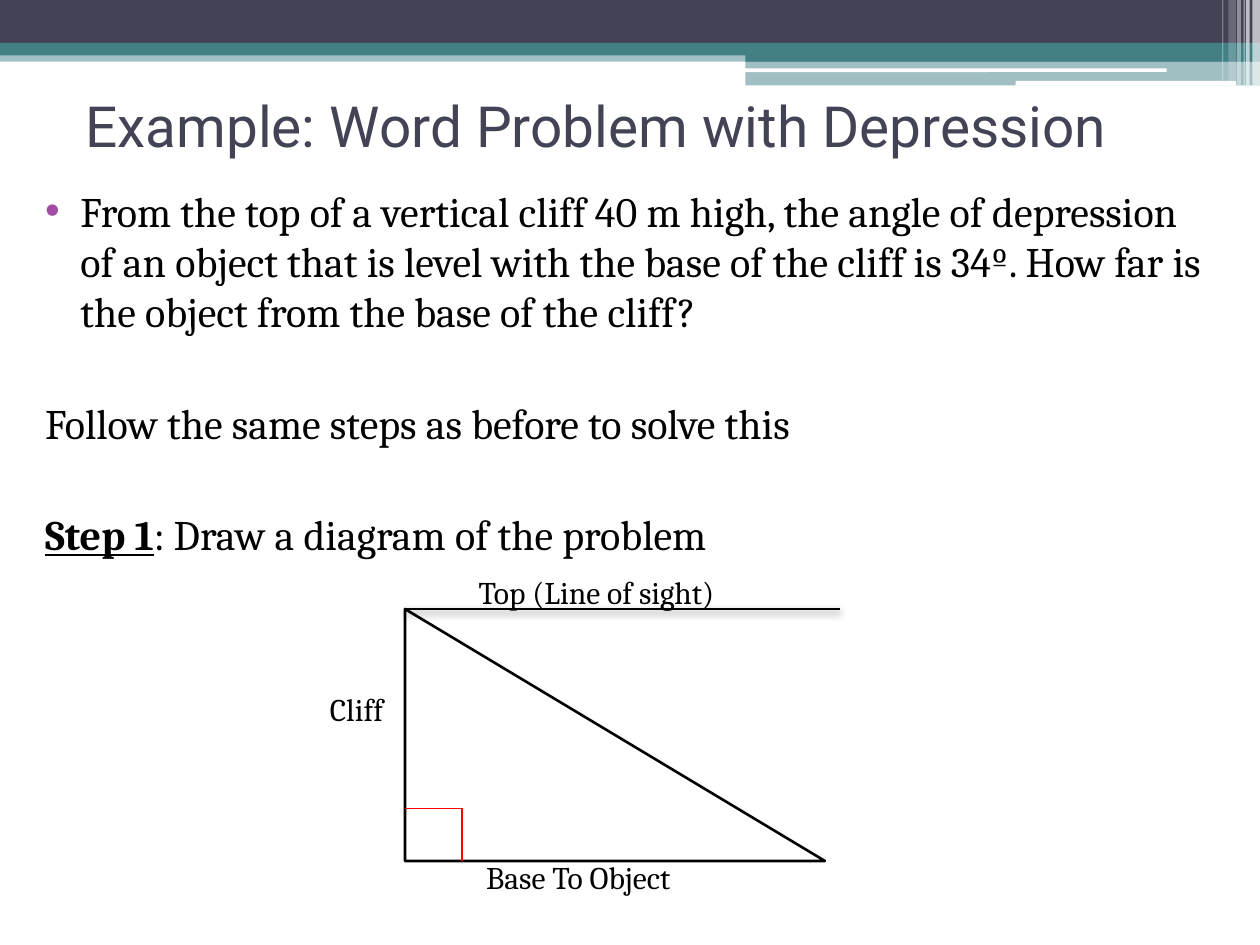
from lxml.etree import SubElement
from pptx import Presentation
from pptx.dml.color import RGBColor
from pptx.enum.shapes import MSO_CONNECTOR, MSO_SHAPE
from pptx.enum.text import MSO_ANCHOR, MSO_AUTO_SIZE
from pptx.oxml.ns import qn
from pptx.util import Pt

COLORS = {
    "navy": "424456",
    "teal": "438086",
    "white": "FFFFFF",
    "black": "000000",
    "red": "FF0000",
    "purple": "A04DA3",
}


def color(name):
    return RGBColor.from_string(COLORS[name])


def add_text(paragraph, text, size=24, font="Cambria", fill="black", bold=False, underline=False):
    run = paragraph.add_run()
    run.text = text
    run.font.size = Pt(size)
    run.font.name = font
    run.font.color.rgb = color(fill)
    run.font.bold = bold
    run.font.underline = underline


class SlideBuilder:
    def __init__(self, slide, label_size=18, outline=1.5):
        self.slide = slide
        self.label_size = label_size
        self.outline = outline

    def shape(self, kind, left, top, width, height, fill, opacity=100, line=None):
        shape = self.slide.shapes.add_shape(kind, Pt(left), Pt(top), Pt(width), Pt(height))
        shape.shadow.inherit = False
        shape.fill.solid()
        shape.fill.fore_color.rgb = color(fill)
        if opacity < 100:
            fill_color = shape.fill._xPr.find(f"{qn('a:solidFill')}/{qn('a:srgbClr')}")
            SubElement(fill_color, qn("a:alpha"), val=str(opacity * 1000))
        if line:
            shape.line.color.rgb = color(line)
            shape.line.width = Pt(self.outline)
        else:
            shape.line.fill.background()

    def line(self, start, end, stroke, width, shadow=False):
        points = [Pt(value) for value in (*start, *end)]
        connector = self.slide.shapes.add_connector(MSO_CONNECTOR.STRAIGHT, *points)
        connector.line.color.rgb = color(stroke)
        connector.line.width = Pt(width)
        effects = SubElement(connector._element.spPr, qn("a:effectLst"))
        if shadow:
            outer = SubElement(effects, qn("a:outerShdw"), blurRad=str(Pt(4.1)),
                               dist=str(Pt(2)), dir="5400000", rotWithShape="0")
            shade = SubElement(outer, qn("a:srgbClr"), val=COLORS["black"])
            SubElement(shade, qn("a:alpha"), val="40000")

    def text_box(self, left, top, width, height, anchor=MSO_ANCHOR.TOP):
        box = self.slide.shapes.add_textbox(Pt(left), Pt(top), Pt(width), Pt(height))
        box.text_frame.word_wrap = True
        box.text_frame.vertical_anchor = anchor
        return box.text_frame

    def label(self, text, left, top, width):
        frame = self.text_box(left, top, width, 29)
        frame.auto_size = MSO_AUTO_SIZE.SHAPE_TO_FIT_TEXT
        add_text(frame.paragraphs[0], text, size=self.label_size)

    def body_paragraph(self, paragraph, margin, indent, space_before, bullet=None):
        paragraph.space_before = Pt(space_before)
        properties = paragraph._p.get_or_add_pPr()
        properties.set("marL", str(Pt(margin)))
        properties.set("indent", str(Pt(indent)))
        if bullet:
            bullet_color = SubElement(properties, qn("a:buClr"))
            SubElement(bullet_color, qn("a:srgbClr"), val=COLORS["purple"])
            SubElement(properties, qn("a:buFont"), typeface="Arial")
            SubElement(properties, qn("a:buChar"), char=bullet)


def draw_header(builder):
    bands = [
        (0, 28.8, 720, 6.5, "teal", 50),
        (0, 0, 720, 24.5, "navy", 100),
        (0, 24.5, 720, 7.2, "teal", 100),
        (426, 28.1, 294, 7.2, "teal", 100),
        (426, 34.6, 294, 14.2, "teal", 50),
    ]
    for band in bands:
        builder.shape(MSO_SHAPE.RECTANGLE, *band)
    for bar in [(425.5, 39.1, 241.2, 2.1), (580.3, 46.2, 126, 2.7)]:
        builder.shape(MSO_SHAPE.ROUNDED_RECTANGLE, *bar, "white")
    stripes = [
        (715.6, 4.4, 48.8, 65),
        (712, 2.1, 48.8, 65),
        (710.6, 0.7, 48.8, 60),
        (707, 2.1, 48.8, 40),
        (702, 4.3, 46.1, 20),
        (698.4, 0.7, 46.1, 30),
    ]
    for left, width, height, opacity in stripes:
        builder.shape(MSO_SHAPE.RECTANGLE, left, 0, width, height, "white", opacity)


def draw_text(builder):
    title = builder.text_box(41.76, 41.76, 648, 59.76, MSO_ANCHOR.MIDDLE)
    add_text(title.paragraphs[0], "Example: Word Problem with Depression",
             size=32.4, font="Roboto", fill="navy")

    body = builder.text_box(10.08, 102.24, 684, 414)
    problem = body.paragraphs[0]
    builder.body_paragraph(problem, 28.8, -20.16, 3, bullet="•")
    add_text(problem, "From the top of a vertical cliff 40 m high, the angle of depression of an "
             "object that is level with the base of the cliff is 34º. How far is the object "
             "from the base of the cliff?")
    advice, step = body.add_paragraph(), body.add_paragraph()
    for paragraph in (advice, step):
        builder.body_paragraph(paragraph, 8.64, 0, 34.8)
    add_text(advice, "Follow the same steps as before to solve this")
    add_text(step, "Step 1", bold=True, underline=True)
    add_text(step, ": Draw a diagram of the problem")


def draw_diagram(builder):
    left, top, width, height = 231.4, 348, 240, 144
    corner_x, corner_y = 264, 462
    builder.label("Cliff", 181.44, 390.96, 66.24)
    builder.label("Base To Object", 270.72, 486.72, 162)
    builder.shape(MSO_SHAPE.RIGHT_TRIANGLE, left, top, width, height, "white", line="black")
    builder.line((left, corner_y), (corner_x, corner_y), "red", 0.75)
    builder.line((corner_x, corner_y), (corner_x, top + height), "red", 0.75)
    builder.line((left, top), (480, top), "black", builder.outline, shadow=True)
    builder.label("Top (Line of sight)", 266.4, 324, 183.6)


def main():
    presentation = Presentation()
    presentation.slide_width = Pt(720)
    presentation.slide_height = Pt(540)
    builder = SlideBuilder(presentation.slides.add_slide(presentation.slide_layouts[6]))
    draw_header(builder)
    draw_text(builder)
    draw_diagram(builder)
    presentation.save("out.pptx")


if __name__ == "__main__":
    main()
